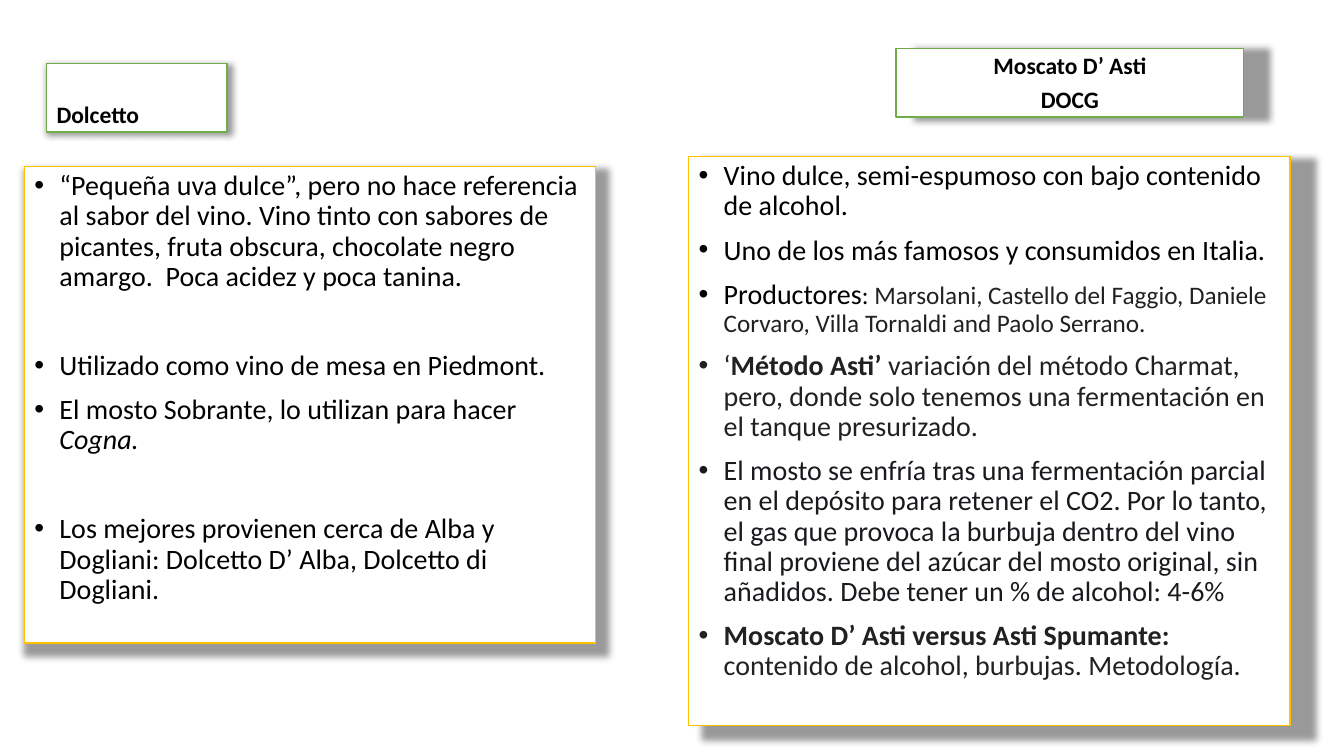
"""Build a slide comparing the wines Dolcetto and Moscato D' Asti."""
import pptx
import pptx.dml.color
import pptx.enum.text
import pptx.oxml
import pptx.oxml.ns
import pptx.util
from pptx.util import Cm

COLORS = {"black": "000000", "soft": "212121", "ink": "191A1E",
          "white": "FFFFFF", "green": "70AD47", "gold": "FFC000"}
NAMESPACE = pptx.oxml.ns.nsdecls("a")
SHADOW = (f'<a:outerShdw {NAMESPACE} blurRad="63500" sx="102000" sy="102000" '
          'algn="ctr" rotWithShape="0"><a:srgbClr val="000000">'
          '<a:alpha val="40000"/></a:srgbClr></a:outerShdw>')
BULLET = (f'<a:buFont {NAMESPACE} typeface="Arial"/>', f'<a:buChar {NAMESPACE} char="•"/>')
ALIGN = pptx.enum.text.PP_ALIGN
ANCHOR = pptx.enum.text.MSO_ANCHOR


def rgb(name):
    return pptx.dml.color.RGBColor.from_string(COLORS[name])


def add_para(box, first, spans, line_spacing, space_before, align):
    frame = box.text_frame
    para = frame.paragraphs[0] if first else frame.add_paragraph()
    para.alignment = align
    para.line_spacing = line_spacing
    para.space_before = pptx.util.Pt(space_before)
    para.space_after = pptx.util.Pt(0)
    for text, size, color, style in spans:
        span = para.add_run()
        span.text = text
        span.font.name = "Calibri"
        span.font.size = pptx.util.Pt(size)
        span.font.bold = style == "bold"
        span.font.italic = style == "italic"
        span.font.color.rgb = rgb(color)
    return para


deck = pptx.Presentation()
deck.slide_width, deck.slide_height = Cm(33.87), Cm(19.05)
comparison = deck.slide_layouts.get_by_name("Comparison")
page = deck.slides.add_slide(comparison)
title = page.shapes.title
title.element.getparent().remove(title.element)

headings = [
    (1, (1.17, 1.6, 4.55, 1.73), ALIGN.LEFT, ["Dolcetto"]),
    (3, (22.58, 1.22, 8.76, 1.73), ALIGN.CENTER, ["Moscato D’ Asti", "DOCG"]),
]
notes = [
    (2, (0.61, 4.19, 14.4, 12.01), [
        (10, [("“Pequeña uva dulce”, pero no hace referencia al sabor del vino. "
               "Vino tinto con sabores de picantes, fruta obscura, chocolate negro "
               "amargo.  Poca acidez y poca tanina.", 20, "black", "")]),
        (42, [("Utilizado como vino de mesa en Piedmont.", 20, "black", "")]),
        (10, [("El mosto Sobrante, lo utilizan para hacer ", 20, "black", ""),
              ("Cogna.", 20, "black", "italic")]),
        (42, [("Los mejores provienen cerca de Alba y Dogliani: Dolcetto D’ Alba, "
               "Dolcetto di Dogliani.", 20, "black", "")]),
    ]),
    (4, (17.35, 3.94, 15.16, 14.35), [
        (10, [("Vino dulce, semi-espumoso con bajo contenido de alcohol.", 20, "black", "")]),
        (10, [("Uno de los más famosos y consumidos en Italia.", 20, "black", "")]),
        (10, [("Productores", 20, "black", ""), (": ", 18, "black", ""),
              ("Marsolani, Castello del Faggio, Daniele Corvaro, Villa Tornaldi "
               "and Paolo Serrano.", 18, "soft", "")]),
        (10, [("‘", 20, "soft", ""), ("Método Asti’ ", 20, "soft", "bold"),
              ("variación del método Charmat, pero, donde solo tenemos una "
               "fermentación en el tanque presurizado.", 20, "soft", "")]),
        (10, [("El mosto se enfría tras una fermentación parcial en el depósito para "
               "retener el CO2. Por lo tanto, el gas que provoca la burbuja dentro del "
               "vino final proviene del azúcar del mosto original, sin añadidos. Debe "
               "tener un % de alcohol: 4-6%", 20, "ink", "")]),
        (10, [("Moscato D’ Asti versus Asti Spumante: ", 20, "soft", "bold"),
              ("contenido de alcohol, burbujas. Metodología.", 20, "soft", "")]),
    ]),
]

boxes = {box.placeholder_format.idx: box for box in page.placeholders}
frames = [(index, place, "green", ANCHOR.BOTTOM) for index, place, *_ in headings]
frames += [(index, place, "gold", ANCHOR.TOP) for index, place, *_ in notes]
for index, place, border, anchor in frames:
    box = boxes[index]
    box.left, box.top, box.width, box.height = map(Cm, place)
    box.fill.solid()
    box.fill.fore_color.rgb = rgb("white")
    box.line.color.rgb = rgb(border)
    box.line.width = pptx.util.Pt(1)
    effects = pptx.oxml.parse_xml(f"<a:effectLst {NAMESPACE}/>")
    effects.append(pptx.oxml.parse_xml(SHADOW))
    box.element.spPr.append(effects)
    box.text_frame.word_wrap = True
    box.text_frame.auto_size = pptx.enum.text.MSO_AUTO_SIZE.NONE
    box.text_frame.vertical_anchor = anchor

for index, place, align, lines in headings:
    for number, line in enumerate(lines):
        add_para(boxes[index], number == 0, [(line, 16.8, "black", "bold")], 0.7, 10, align)

for index, place, points in notes:
    for number, (gap, spans) in enumerate(points):
        para = add_para(boxes[index], number == 0, spans, 0.9, gap, ALIGN.LEFT)
        properties = para._p.get_or_add_pPr()
        properties.set("marL", str(Cm(0.635)))
        properties.set("indent", str(-Cm(0.635)))
        for mark in BULLET:
            properties.append(pptx.oxml.parse_xml(mark))

deck.save("out.pptx")
